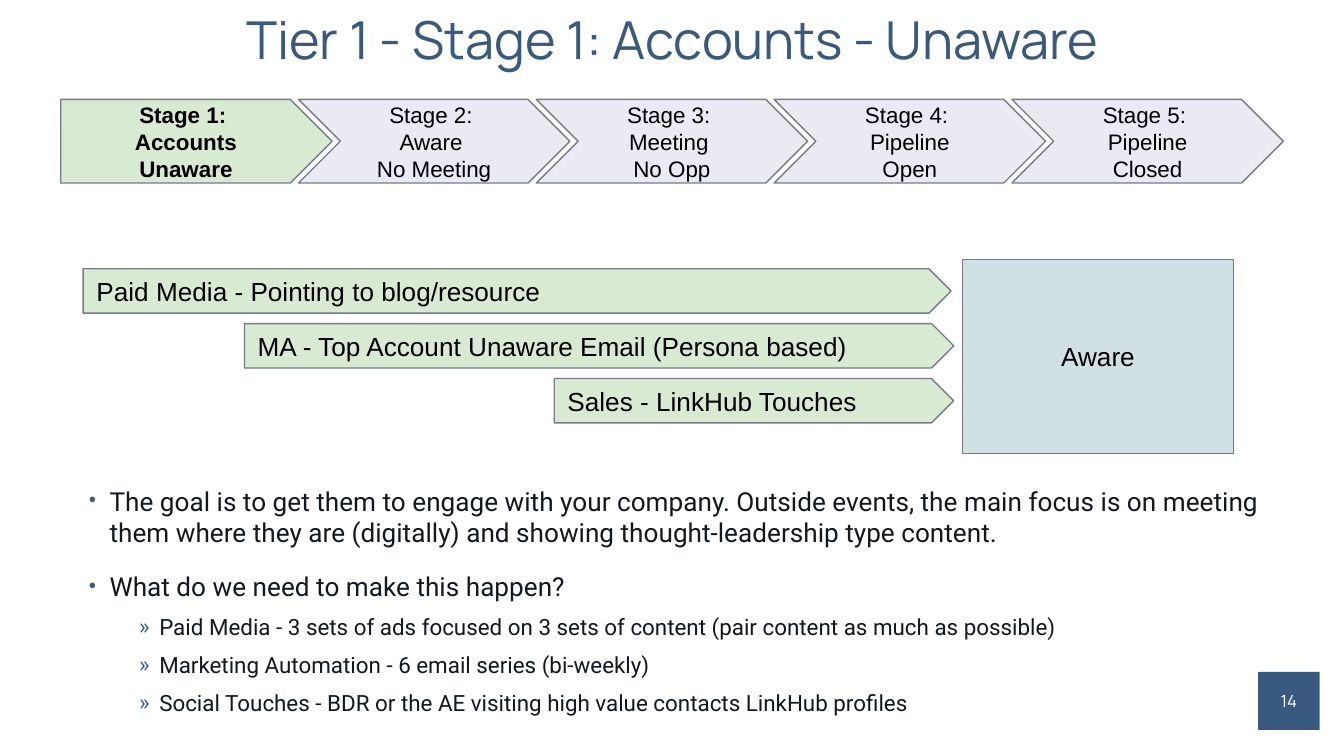
"""Build the slide on the first stage of a tier one account plan."""
from dataclasses import dataclass
from typing import NamedTuple

from lxml import etree
from pptx import Presentation
from pptx.dml.color import RGBColor
from pptx.enum.shapes import MSO_SHAPE
from pptx.enum.text import MSO_ANCHOR, MSO_AUTO_SIZE, PP_ALIGN
from pptx.oxml.ns import qn
from pptx.util import Pt

RECT, PLATE, CHEVRON = MSO_SHAPE.RECTANGLE, MSO_SHAPE.PENTAGON, MSO_SHAPE.CHEVRON
LEFT, CENTER = PP_ALIGN.LEFT, PP_ALIGN.CENTER
MIDDLE, TOP = MSO_ANCHOR.MIDDLE, MSO_ANCHOR.TOP
FIXED = MSO_AUTO_SIZE.NONE


@dataclass(frozen=True)
class Theme:
    """Hold the colours, fonts and type sizes."""
    navy: str = "395A80"
    ink: str = "12181F"
    black: str = "000000"
    white: str = "FFFFFF"
    green: str = "D9EAD3"
    lilac: str = "E9EAF2"
    teal: str = "D0E0E3"
    edge: str = "757B89"
    head: str = "Manrope"
    text: str = "Roboto"
    label: str = "Arial"
    title: int = 28
    large: int = 14
    small: int = 12
    tiny: int = 9


class Box(NamedTuple):
    """Give a place and size in points."""
    left: float
    top: float
    width: float
    height: float


class Bar(NamedTuple):
    """Describe one channel arrow."""
    text: str
    left: float
    width: float


class Level(NamedTuple):
    """Describe one list level."""
    mark: str
    size: int
    margin: float
    hang: float
    before: float


THEME = Theme()
LEVELS = (
    Level("•", THEME.large, 13.7, -11.5, 12),
    Level("»", THEME.small, 40.3, -10.8, 6),
)
STAGES = (
    ("Stage 1: ", "Accounts", "Unaware"),
    ("Stage 2: ", "Aware ", "No Meeting"),
    ("Stage 3: ", "Meeting ", "No Opp"),
    ("Stage 4: ", "Pipeline", "Open"),
    ("Stage 5: ", "Pipeline", "Closed"),
)
BARS = (
    Bar("Paid Media - Pointing to blog/resource", 44.6, 465),
    Bar("MA - Top Account Unaware Email (Persona based)", 131, 380),
    Bar("Sales - LinkHub Touches", 296.9, 214),
)
POINTS = (
    (0, "The goal is to get them to engage with your company. Outside events, "
        "the main focus is on meeting them where they are (digitally) and "
        "showing thought-leadership type content."),
    (0, "What do we need to make this happen?"),
    (1, "Paid Media - 3 sets of ads focused on 3 sets of content "
        "(pair content as much as possible)"),
    (1, "Marketing Automation - 6 email series (bi-weekly)"),
    (1, "Social Touches - BDR or the AE visiting high value contacts "
        "LinkHub profiles"),
)


def write(para, text: str, *, size: int, face: str, color: str,
          bold: bool = False, align=LEFT, before: float = 0) -> None:
    """Put formatted text in a paragraph."""
    para.alignment = align
    para.space_before = Pt(before)
    run = para.add_run()
    run.text = text
    run.font.size = Pt(size)
    run.font.name = face
    run.font.bold = bold
    run.font.color.rgb = RGBColor.from_string(color)


def place(shape, box: Box) -> None:
    """Move and size a shape."""
    shape.left, shape.top, shape.width, shape.height = map(Pt, box)


def frame_up(shape, inset: float, anchor):
    """Set up the text frame of a shape and return it."""
    frame = shape.text_frame
    frame.word_wrap = True
    frame.auto_size = FIXED
    frame.vertical_anchor = anchor
    frame.margin_left = frame.margin_right = Pt(inset)
    frame.margin_top = frame.margin_bottom = Pt(inset)
    return frame


def draw(slide, kind, box: Box, lines: tuple[str, ...], fill: str, *,
         edge: str | None = THEME.edge, inset: float = 7.2,
         size: int = THEME.large, face: str = THEME.label,
         color: str = THEME.black, bold: bool = False, align=CENTER) -> None:
    """Draw a filled shape with its label."""
    shape = slide.shapes.add_shape(kind, *map(Pt, box))
    shape.shadow.inherit = False
    shape.fill.solid()
    shape.fill.fore_color.rgb = RGBColor.from_string(fill)
    if edge:
        shape.line.color.rgb = RGBColor.from_string(edge)
        shape.line.width = Pt(0.75)
    else:
        shape.line.fill.background()
    frame = frame_up(shape, inset, MIDDLE)
    for index, line in enumerate(lines):
        para = frame.add_paragraph() if index else frame.paragraphs[0]
        write(para, line, size=size, face=face, color=color, bold=bold,
              align=align)


def mark(para, level: Level) -> None:
    """Give a paragraph its bullet and indent."""
    props = para._p.get_or_add_pPr()
    props.set("marL", str(Pt(level.margin)))
    props.set("indent", str(Pt(level.hang)))
    tint = etree.SubElement(props, qn("a:buClr"))
    etree.SubElement(tint, qn("a:srgbClr"), val=THEME.navy)
    etree.SubElement(props, qn("a:buFont"), typeface=THEME.text)
    etree.SubElement(props, qn("a:buChar"), char=level.mark)


def fill_list(body) -> None:
    """Write the goal and its needs as a list."""
    place(body, Box(45, 260, 630, 146))
    frame = frame_up(body, 0, TOP)
    for index, (depth, text) in enumerate(POINTS):
        para = frame.add_paragraph() if index else frame.paragraphs[0]
        level = LEVELS[depth]
        para.level = depth
        mark(para, level)
        write(para, text, size=level.size, face=THEME.text, color=THEME.ink,
              before=level.before if index else 0)


def main() -> None:
    """Build and save the slide."""
    deck = Presentation()
    deck.slide_width, deck.slide_height = Pt(720), Pt(405)
    slide = deck.slides.add_slide(deck.slide_layouts[1])
    title, body = slide.placeholders
    place(title, Box(45, 7.8, 630, 30))
    para = frame_up(title, 0, MIDDLE).paragraphs[0]
    para.line_spacing = 0.9
    write(para, "Tier 1 - Stage 1: Accounts - Unaware", size=THEME.title,
          face=THEME.head, color=THEME.navy, align=CENTER)
    fill_list(body)
    draw(slide, RECT, Box(674, 360, 33, 31), ("14",), THEME.navy, edge=None,
         inset=0, size=THEME.tiny, face=THEME.head, color=THEME.white)
    for index, bar in enumerate(BARS):
        draw(slide, PLATE, Box(bar.left, 144 + 29.4 * index, bar.width, 23.8),
             (bar.text,), THEME.green, align=LEFT)
    draw(slide, RECT, Box(515.5, 139, 145.4, 104), ("Aware",), THEME.teal)
    for index, lines in enumerate(STAGES):
        first = index == 0
        draw(slide, PLATE if first else CHEVRON,
             Box(32.5 + 127.4 * index, 53.3, 145.4, 44.8), lines,
             THEME.green if first else THEME.lilac, size=THEME.small,
             bold=first)
    deck.save("out.pptx")


if __name__ == "__main__":
    main()
